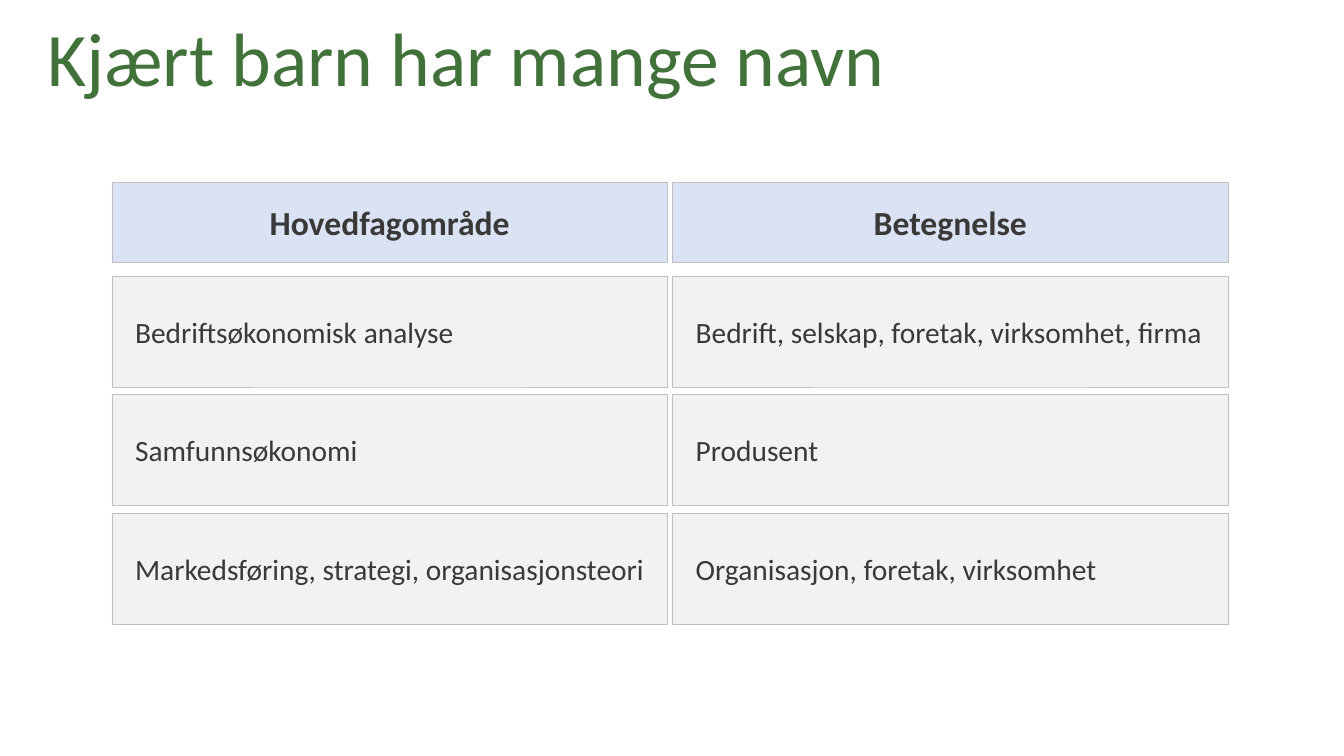
"""Build a slide that pairs subject areas with their terms for a business."""
from pptx import Presentation
from pptx.dml.color import RGBColor
from pptx.enum.shapes import MSO_SHAPE
from pptx.enum.text import MSO_ANCHOR, PP_ALIGN
from pptx.util import Inches, Pt

GREEN = RGBColor(0x41, 0x72, 0x3A)
DARK_GREY = RGBColor(0x3B, 0x38, 0x38)
HEADER_BLUE = RGBColor(0xDA, 0xE3, 0xF3)
LIGHT_GREY = RGBColor(0xF2, 0xF2, 0xF2)
BORDER_GREY = RGBColor(0xBF, 0xBF, 0xBF)

ROWS = [
    ("Hovedfagområde", "Betegnelse"),
    ("Bedriftsøkonomisk analyse", "Bedrift, selskap, foretak, virksomhet, firma"),
    ("Samfunnsøkonomi", "Produsent"),
    ("Markedsføring, strategi, organisasjonsteori", "Organisasjon, foretak, virksomhet"),
]
COLUMN_LEFTS = (1.11, 6.67)
BOX_WIDTH = 5.51
HEADER_TOP, HEADER_HEIGHT = 1.81, 0.79
BODY_TOP, BODY_HEIGHT, BODY_STEP = 2.74, 1.1, 1.175


def write(shape, text, size, color, bold=False):
    text_frame = shape.text_frame
    text_frame.word_wrap = True
    text_frame.vertical_anchor = MSO_ANCHOR.MIDDLE
    text_frame.text = text
    paragraph = text_frame.paragraphs[0]
    font = paragraph.runs[0].font
    font.name = "Calibri"
    font.size = Pt(size)
    font.bold = bold
    font.color.rgb = color
    return paragraph


presentation = Presentation()
presentation.slide_width = Inches(13.33)
presentation.slide_height = Inches(7.5)
slide = presentation.slides.add_slide(presentation.slide_layouts[6])

title = slide.shapes.add_textbox(Inches(0.37), Inches(0.16), Inches(9.61), Inches(0.92))
write(title, "Kjært barn har mange navn", 54, GREEN).line_spacing = 0.9

for row, texts in enumerate(ROWS):
    is_header = row == 0
    top = HEADER_TOP if is_header else BODY_TOP + (row - 1) * BODY_STEP
    height = HEADER_HEIGHT if is_header else BODY_HEIGHT
    for left, text in zip(COLUMN_LEFTS, texts):
        box = slide.shapes.add_shape(
            MSO_SHAPE.RECTANGLE, Inches(left), Inches(top), Inches(BOX_WIDTH), Inches(height)
        )
        box.shadow.inherit = False
        box.fill.solid()
        box.fill.fore_color.rgb = HEADER_BLUE if is_header else LIGHT_GREY
        box.line.color.rgb = BORDER_GREY
        box.line.width = Pt(0.25)
        paragraph = write(box, text, 24 if is_header else 21, DARK_GREY, is_header)
        if is_header:
            paragraph.alignment = PP_ALIGN.CENTER
        else:
            paragraph.alignment = PP_ALIGN.LEFT
            box.text_frame.margin_left = Inches(0.23)

presentation.save("out.pptx")
